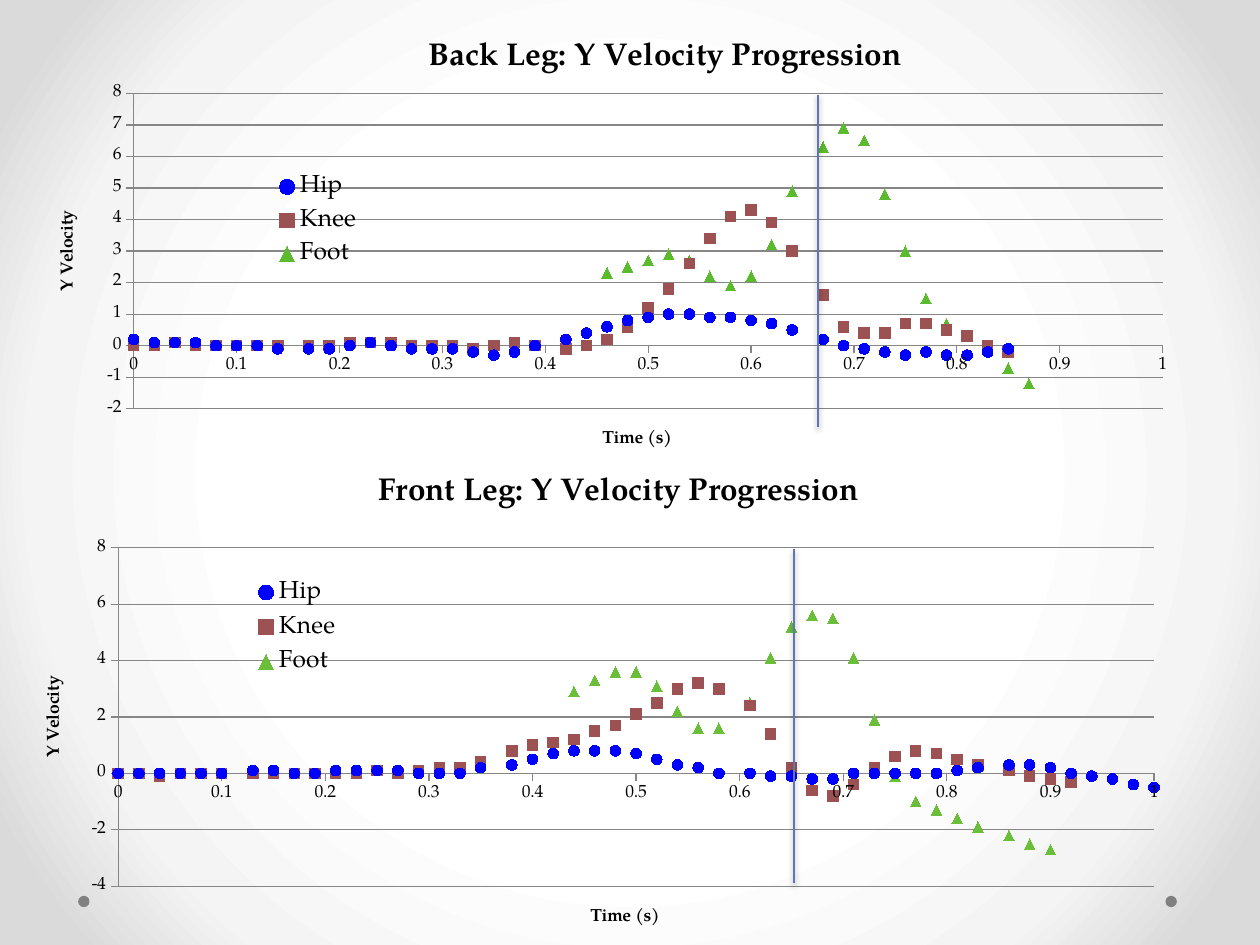
from dataclasses import dataclass
from typing import NamedTuple, Optional

from lxml.etree import SubElement
from pptx import Presentation
from pptx.chart.data import XyChartData
from pptx.dml.color import RGBColor
from pptx.enum.chart import XL_CHART_TYPE as ChartType
from pptx.enum.chart import XL_LEGEND_POSITION as LegendPosition
from pptx.enum.chart import XL_MARKER_STYLE as Marker
from pptx.enum.chart import XL_TICK_MARK as TickMark
from pptx.enum.shapes import MSO_CONNECTOR as Connector
from pptx.enum.shapes import MSO_SHAPE as Shape
from pptx.oxml import parse_xml
from pptx.oxml.ns import nsdecls, qn
from pptx.util import Inches, Pt

COLUMNS, ROWS = 100, 75
SLIDE_WIDTH, SLIDE_HEIGHT = Inches(10), Inches(7.5)


@dataclass(frozen=True)
class Theme:
    font: str = "TeX Gyre Pagella"
    text: str = "000000"
    grid: str = "868686"
    dot: str = "808080"
    event_line: str = "6076B4"
    hip: str = "0000FF"
    knee: str = "9C5252"
    front_foot: str = "6ABE3A"
    back_foot: str = "5CBA2E"
    backdrop: tuple = ((50, "FFFFFF"), (76, "F4F4F4"), (92, "DADADA"))
    title_size: int = 18
    legend_size: int = 14
    label_size: int = 10
    marker_size: int = 6


THEME = Theme()


class Box(NamedTuple):
    """Left, top, width and height, in grid cells or in shares of a chart."""
    left: float
    top: float
    width: float
    height: float


class Joint(NamedTuple):
    name: str
    color: str
    marker: Marker
    first_frame: int
    velocities: list


class Timeline(NamedTuple):
    """Sampling times; the frames in `doubled` are followed by an empty sample."""
    frames: int
    step: float
    offset: float
    doubled: range

    def time(self, frame: int) -> float:
        return round(max(0, frame * self.step + self.offset), 2)


class LegChart(NamedTuple):
    title: str
    box: Box
    plot: Box
    legend: Box
    lowest: int
    major_unit: int
    timeline: Timeline
    joints: list
    event_line: tuple  # column, top row, bottom row


FRONT = LegChart(
    "Front Leg: Y Velocity Progression",
    Box(2.7, 35.9, 92.8, 39.1), Box(0.072, 0.194, 0.886, 0.687), Box(0.175, 0.24, 0.1, 0.23),
    -4, 2, Timeline(50, 0.02087, 0, range(31, 38)),
    [
        Joint("Hip", THEME.hip, Marker.CIRCLE, 0, [
            0, 0, 0, 0, 0, 0, 0.1, 0.1, 0, 0, 0.1, 0.1, 0.1, 0.1, 0, 0, 0, 0.2, 0.3, 0.5,
            0.7, 0.8, 0.8, 0.8, 0.7, 0.5, 0.3, 0.2, 0, 0, -0.1, -0.1, -0.2, -0.2, 0, 0, 0, 0,
            0, 0.1, 0.2, 0.3, 0.3, 0.2, 0, -0.1, -0.2, -0.4, -0.5, -0.5]),
        Joint("Knee", THEME.knee, Marker.SQUARE, 0, [
            0, 0, -0.1, 0, 0, 0, 0, 0, 0, 0, 0, 0, 0.1, 0, 0.1, 0.2, 0.2, 0.4, 0.8, 1,
            1.1, 1.2, 1.5, 1.7, 2.1, 2.5, 3, 3.2, 3, 2.4, 1.4, 0.2, -0.6, -0.8, -0.4, 0.2,
            0.6, 0.8, 0.7, 0.5, 0.3, 0.1, -0.1, -0.2, -0.3]),
        Joint("Foot", THEME.front_foot, Marker.TRIANGLE, 21, [
            2.9, 3.3, 3.6, 3.6, 3.1, 2.2, 1.6, 1.6, 2.5, 4.1, 5.2, 5.6, 5.5, 4.1, 1.9, -0.1,
            -1, -1.3, -1.6, -1.9, -2.2, -2.5, -2.7]),
    ],
    (63, 43.6, 70.1))

BACK = LegChart(
    "Back Leg: Y Velocity Progression",
    Box(2.7, 1.4, 100.2, 36.2), Box(0.079, 0.166, 0.815, 0.692), Box(0.175, 0.325, 0.1, 0.24),
    -2, 1, Timeline(45, 0.02085, -0.00155, range(32, 37)),
    [
        Joint("Hip", THEME.hip, Marker.CIRCLE, 0, [
            0.2, 0.1, 0.1, 0.1, 0, 0, 0, -0.1, -0.1, -0.1, 0, 0.1, 0, -0.1, -0.1, -0.1, -0.2,
            -0.3, -0.2, 0, 0.2, 0.4, 0.6, 0.8, 0.9, 1, 1, 0.9, 0.9, 0.8, 0.7, 0.5, 0.2, 0,
            -0.1, -0.2, -0.3, -0.2, -0.3, -0.3, -0.2, -0.1]),
        Joint("Knee", THEME.knee, Marker.SQUARE, 0, [
            0, 0, 0.1, 0, 0, 0, 0, 0, 0, 0, 0.1, 0.1, 0.1, 0, 0, 0, -0.1, 0, 0.1, 0, -0.1, 0,
            0.2, 0.6, 1.2, 1.8, 2.6, 3.4, 4.1, 4.3, 3.9, 3, 1.6, 0.6, 0.4, 0.4, 0.7, 0.7, 0.5,
            0.3, 0, -0.2]),
        Joint("Foot", THEME.back_foot, Marker.TRIANGLE, 22, [
            2.3, 2.5, 2.7, 2.9, 2.7, 2.2, 1.9, 2.2, 3.2, 4.9, 6.3, 6.9, 6.5, 4.8, 3, 1.5,
            0.7, 0.3, -0.1, -0.7, -1.2]),
    ],
    (64.9, 7.5, 33.9))


def across(columns: float) -> int:
    return round(SLIDE_WIDTH * columns / COLUMNS)


def down(rows: float) -> int:
    return round(SLIDE_HEIGHT * rows / ROWS)


def place(box: Box) -> tuple:
    return across(box.left), down(box.top), across(box.width), down(box.height)


def rgb(color: str) -> RGBColor:
    return RGBColor.from_string(color)


def paint_background(slide) -> None:
    slide.background.fill.solid()
    properties = slide.element.find(".//" + qn("p:bgPr"))
    stops = "".join(f'<a:gs pos="{share * 1000}"><a:srgbClr val="{color}"/></a:gs>'
                    for share, color in THEME.backdrop)
    gradient = parse_xml(
        f'<a:gradFill {nsdecls("a")} rotWithShape="1"><a:gsLst>{stops}</a:gsLst>'
        '<a:path path="circle"><a:fillToRect l="50000" t="50000" r="50000" b="50000"/></a:path>'
        '</a:gradFill>')
    properties.replace(properties.find(qn("a:solidFill")), gradient)


def add_dot(slide, box: Box) -> None:
    dot = slide.shapes.add_shape(Shape.OVAL, *place(box))
    dot.shadow.inherit = False
    dot.fill.solid()
    dot.fill.fore_color.rgb = rgb(THEME.dot)
    dot.line.fill.background()


def chart_data(leg: LegChart) -> XyChartData:
    data = XyChartData()
    for joint in leg.joints:
        series = data.add_series(joint.name)
        measured = dict(enumerate(joint.velocities, joint.first_frame))
        for frame in range(leg.timeline.frames):
            time = leg.timeline.time(frame)
            series.add_data_point(time, measured.get(frame))
            if frame in leg.timeline.doubled:
                series.add_data_point(time, None)
    return data


def write_title(holder, text: str, size: int) -> None:
    run = holder.text_frame.paragraphs[0].add_run()
    run.text = text
    run.font.size, run.font.bold, run.font.name = Pt(size), True, THEME.font
    run.font.color.rgb = rgb(THEME.text)


def set_layout(parent, box: Box, inner: bool = False) -> None:
    """Give a plot area or a legend a fixed place in its chart."""
    for old in parent.findall(qn("c:layout")):
        parent.remove(old)
    layout = parse_xml(f'<c:layout {nsdecls("c")}><c:manualLayout/></c:layout>')
    settings = [("layoutTarget", "inner")] if inner else []
    settings += [("xMode", "edge"), ("yMode", "edge"), *zip("xywh", box)]
    for tag, value in settings:
        SubElement(layout[0], qn(f"c:{tag}")).set("val", str(value))
    position = parent.find(qn("c:legendPos"))
    parent.insert(0 if position is None else parent.index(position) + 1, layout)


def style_axis(axis, title: str, low: float, high: float, unit: float) -> None:
    axis.minimum_scale, axis.maximum_scale, axis.major_unit = low, high, unit
    axis.major_tick_mark, axis.minor_tick_mark = TickMark.OUTSIDE, TickMark.NONE
    axis.tick_labels.number_format = "General"
    axis.tick_labels.number_format_is_linked = False
    axis.format.line.color.rgb = rgb(THEME.grid)
    axis.format.line.width = Pt(0.75)
    write_title(axis.axis_title, title, THEME.label_size)


def add_leg_chart(slide, leg: LegChart) -> None:
    frame = slide.shapes.add_chart(ChartType.XY_SCATTER, *place(leg.box), chart_data(leg))
    chart = frame.chart
    chart.font.name, chart.font.size = THEME.font, Pt(THEME.label_size)
    chart.font.color.rgb = rgb(THEME.text)
    write_title(chart.chart_title, leg.title, THEME.title_size)

    style_axis(chart.category_axis, "Time (s)", 0, 1, 0.1)
    style_axis(chart.value_axis, "Y Velocity", leg.lowest, 8, leg.major_unit)
    chart.category_axis.has_major_gridlines = False
    gridline = chart.value_axis.major_gridlines.format.line
    gridline.color.rgb, gridline.width = rgb(THEME.grid), Pt(0.75)

    chart.has_legend = True
    legend = chart.legend
    legend.position, legend.include_in_layout = LegendPosition.RIGHT, False
    legend.font.size, legend.font.name = Pt(THEME.legend_size), THEME.font

    plot = chart.plots[0]
    plot.vary_by_categories = False
    for joint, series in zip(leg.joints, plot.series):
        series.format.line.fill.background()
        series.marker.style, series.marker.size = joint.marker, THEME.marker_size
        series.marker.format.fill.solid()
        series.marker.format.fill.fore_color.rgb = rgb(joint.color)
        series.marker.format.line.color.rgb = rgb(joint.color)

    root = chart.element
    for point in list(root.iter(qn("c:pt"))):
        if point.findtext(qn("c:v")) == "None":
            point.getparent().remove(point)
    set_layout(root.find(".//" + qn("c:plotArea")), leg.plot, inner=True)
    set_layout(root.find(".//" + qn("c:legend")), leg.legend)


def add_event_line(slide, column: float, top: float, bottom: float) -> None:
    x = across(column)
    line = slide.shapes.add_connector(Connector.STRAIGHT, x, down(top), x, down(bottom))
    line.line.color.rgb, line.line.width = rgb(THEME.event_line), Pt(1)
    line.element.spPr.append(parse_xml(
        f'<a:effectLst {nsdecls("a")}><a:outerShdw blurRad="{Pt(3.1)}" dist="{Pt(1.6)}" '
        'dir="5400000" rotWithShape="0"><a:srgbClr val="000000"><a:alpha val="38000"/>'
        '</a:srgbClr></a:outerShdw></a:effectLst>'))


def main() -> None:
    presentation = Presentation()
    presentation.slide_width, presentation.slide_height = SLIDE_WIDTH, SLIDE_HEIGHT
    slide = presentation.slides.add_slide(presentation.slide_layouts[6])
    paint_background(slide)
    for column in (92.5, 6.2):
        add_dot(slide, Box(column, 71.1, 0.9, 0.9))
    for leg in (FRONT, BACK):
        add_leg_chart(slide, leg)
    for leg in (BACK, FRONT):
        add_event_line(slide, *leg.event_line)
    presentation.save("out.pptx")


if __name__ == "__main__":
    main()
